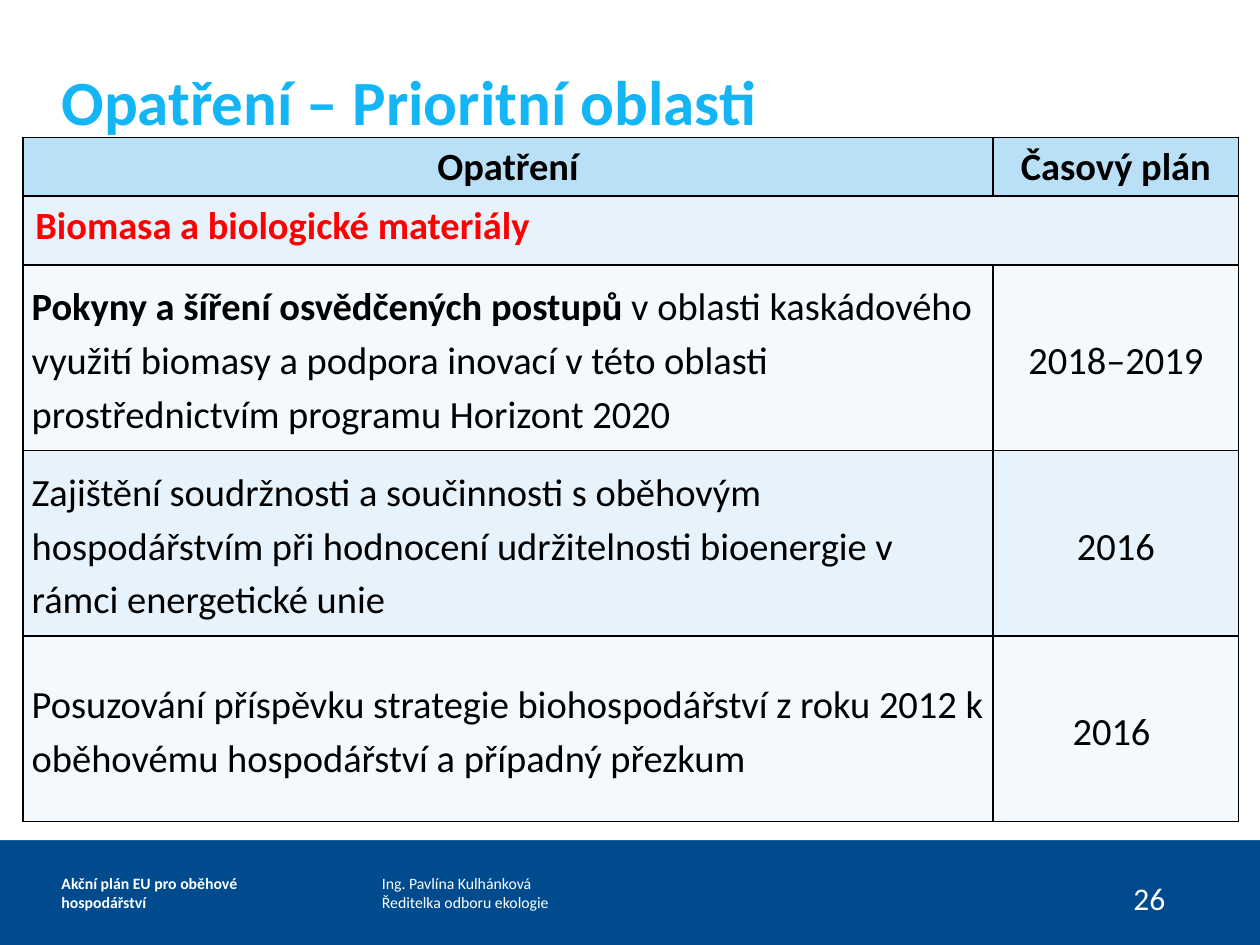
from lxml import etree
from pptx import Presentation
from pptx import util as u
from pptx.dml.color import RGBColor
from pptx.enum import shapes, text
from pptx.oxml import ns

NAVY = RGBColor(0x00, 0x4B, 0x8D)
WHITE = RGBColor(0xFF, 0xFF, 0xFF)
BLACK = RGBColor(0x00, 0x00, 0x00)
RED = RGBColor(0xFF, 0x00, 0x00)
CYAN = RGBColor(0x13, 0xB5, 0xF4)
HEADER_BLUE = RGBColor(0xB9, 0xE0, 0xF7)
BAND_BLUE = RGBColor(0xE6, 0xF3, 0xFC)
PALE_BLUE = RGBColor(0xF3, 0xF9, 0xFD)
CENTER, LEFT = text.PP_ALIGN.CENTER, text.PP_ALIGN.LEFT
MIDDLE = text.MSO_ANCHOR.MIDDLE
NO_INSETS = dict.fromkeys(["margin_left", "margin_top", "margin_right", "margin_bottom"], 0)
BODY_CELL = {**NO_INSETS, "margin_left": u.Cm(0.18), "margin_right": u.Cm(0.18),
             "vertical_anchor": MIDDLE}


def apply(target, values):
    for name, value in values.items():
        setattr(target, name, value)


def add_run(paragraph, words, size, color, bold=False):
    run = paragraph.add_run()
    run.text = words
    apply(run.font, {"name": "Calibri", "size": u.Pt(size), "bold": bold})
    run.font.color.rgb = color


deck = Presentation()
apply(deck, {"slide_width": u.Cm(25.4), "slide_height": u.Cm(19.05)})
slide = deck.slides.add_slide(deck.slide_layouts[5])
slide.background.fill.solid()
slide.background.fill.fore_color.rgb = NAVY

page = slide.shapes.add_shape(shapes.MSO_SHAPE.RECTANGLE, 0, 0, u.Cm(25.4), u.Cm(16.94))
page.shadow.inherit = False
page.fill.solid()
page.fill.fore_color.rgb = WHITE
page.line.fill.background()

FOOTERS = [
    (7.7, 16.94, 5.0, 2.11, ["Ing. Pavlína Kulhánková", "Ředitelka odboru ekologie"], 9, False, NO_INSETS),
    (1.24, 16.94, 5.2, 2.11, ["Akční plán EU pro oběhové hospodářství"], 9, True, NO_INSETS),
    (22.6, 17.6, 1.27, 1.02, ["26"], 18, False, {}),
]
for left, top, width, height, lines, size, bold, insets in FOOTERS:
    footer = slide.shapes.add_textbox(u.Cm(left), u.Cm(top), u.Cm(width), u.Cm(height)).text_frame
    apply(footer, {"word_wrap": True, "vertical_anchor": MIDDLE, **insets})
    for index, line in enumerate(lines):
        paragraph = footer.add_paragraph() if index else footer.paragraphs[0]
        add_run(paragraph, line, size, WHITE, bold)

MEASURES = [
    (HEADER_BLUE, 1.13, [("Opatření", "")], [("Časový plán", "")]),
    (BAND_BLUE, 1.39, [("Biomasa a biologické materiály", "")], []),
    (PALE_BLUE, 3.74,
     [("Pokyny a šíření osvědčených postupů ",
       "v oblasti kaskádového využití biomasy a podpora inovací v této oblasti "
       "prostřednictvím programu Horizont 2020")],
     [("", "2018–2019")]),
    (BAND_BLUE, 3.74,
     [("", "Zajištění soudržnosti a součinnosti s oběhovým hospodářstvím při hodnocení "
           "udržitelnosti bioenergie v rámci energetické unie")],
     [("", "2016")]),
    (PALE_BLUE, 3.74,
     [("", "Posuzování příspěvku strategie biohospodářství z roku 2012 k oběhovému "
           "hospodářství a případný přezkum")],
     [("", "2016 ")]),
]
plan = slide.shapes.add_table(len(MEASURES), 2, u.Cm(0.46), u.Cm(2.77), u.Cm(24.51), u.Cm(13.74)).table
plan.columns[0].width, plan.columns[1].width = u.Cm(19.56), u.Cm(4.95)
plan.cell(1, 0).merge(plan.cell(1, 1))
for row, (fill, height, *columns) in enumerate(MEASURES):
    plan.rows[row].height = u.Cm(height)
    for column, parts in enumerate(columns):
        cell = plan.cell(row, column)
        properties = cell._tc.get_or_add_tcPr()
        for side in ("lnL", "lnR", "lnT", "lnB"):
            border = etree.SubElement(properties, ns.qn(f"a:{side}"), w=str(u.Pt(1)))
            ink = etree.SubElement(border, ns.qn("a:solidFill"))
            etree.SubElement(ink, ns.qn("a:srgbClr"), val=str(BLACK))
        cell.fill.solid()
        cell.fill.fore_color.rgb = fill
        paragraph = cell.text_frame.paragraphs[0]
        paragraph.alignment = CENTER if row == 0 or column == 1 else LEFT
        if row > 1:
            apply(cell, BODY_CELL)
            paragraph.line_spacing = 1.15
        for strong, plain in parts:
            if strong:
                add_run(paragraph, strong, 22, RED if row == 1 else BLACK, True)
            if plain:
                add_run(paragraph, plain, 22, BLACK)

title = slide.shapes.title
title.element.getparent().append(title.element)
apply(title, {"left": u.Cm(1.24), "top": u.Cm(1.24), "width": u.Cm(22.89), "height": u.Cm(1.55)})
apply(title.text_frame, {**NO_INSETS, "word_wrap": True, "vertical_anchor": MIDDLE,
                         "auto_size": text.MSO_AUTO_SIZE.SHAPE_TO_FIT_TEXT})
heading = title.text_frame.paragraphs[0]
heading.alignment = LEFT
add_run(heading, "Opatření – Prioritní oblasti", 36, CYAN, True)

deck.save("out.pptx")
